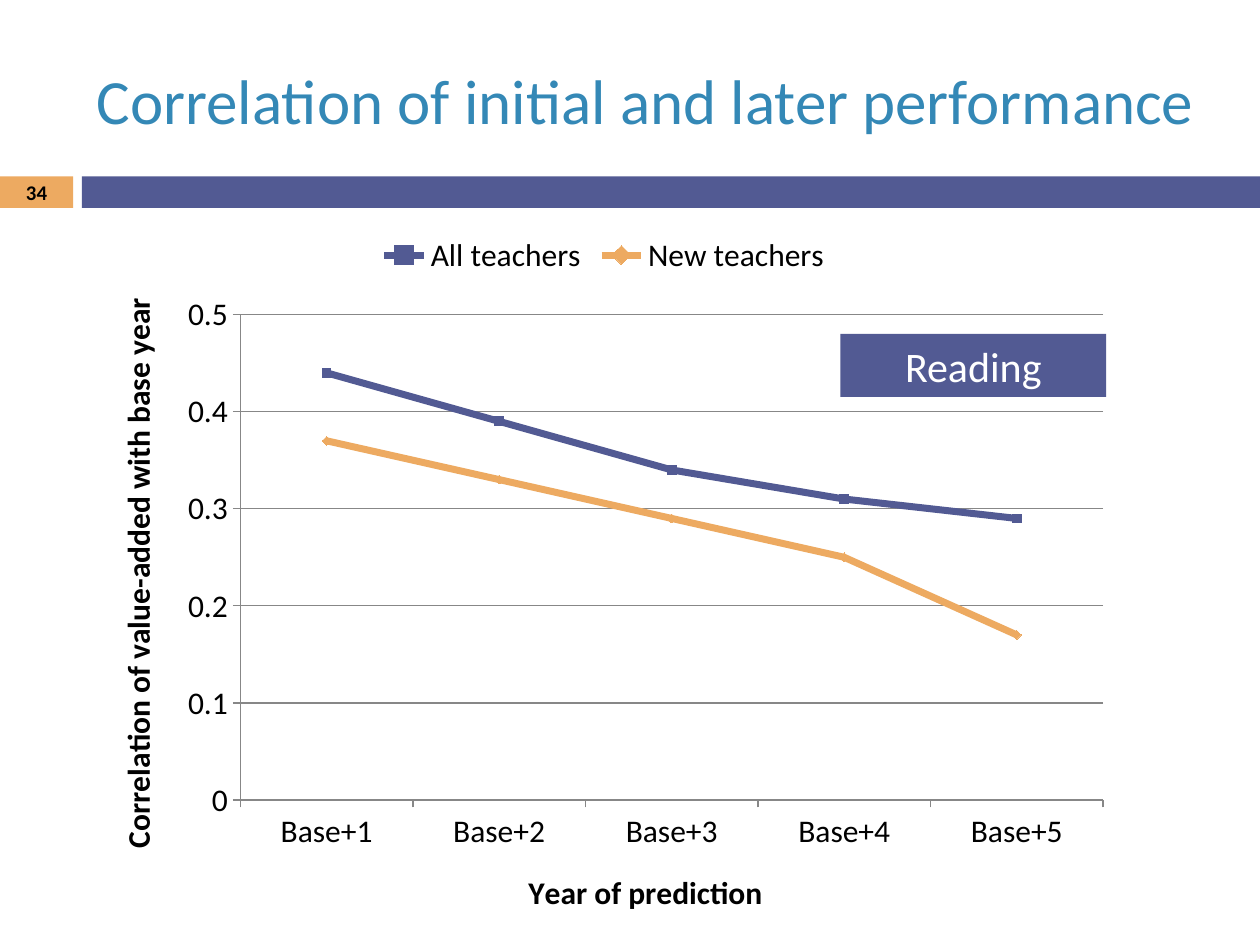
from pptx import Presentation
from pptx.chart.data import CategoryChartData
from pptx.dml.color import RGBColor
from pptx.enum.chart import (XL_CHART_TYPE as ChartType, XL_LEGEND_POSITION as LegendPosition,
                             XL_MARKER_STYLE as Marker, XL_TICK_MARK as TickMark)
from pptx.enum.shapes import MSO_SHAPE as Preset
from pptx.enum.text import MSO_ANCHOR as Anchor, PP_ALIGN as Align
from pptx.oxml import parse_xml
from pptx.oxml.ns import nsdecls
from pptx.util import Inches, Pt

COLORS = {"indigo": "525A93", "orange": "EDAA61", "title": "3488B6",
          "black": "000000", "white": "FFFFFF", "grid": "878787"}
FONT = "Calibri"
CATEGORIES = [f"Base+{year}" for year in range(1, 6)]
SERIES = [
    ("All teachers", [0.44, 0.39, 0.34, 0.31, 0.29], "indigo", Marker.SQUARE),
    ("New teachers", [0.37, 0.33, 0.29, 0.25, 0.17], "orange", Marker.DIAMOND),
]
PLOT_LAYOUT = {"x": 0.15, "y": 0.13, "w": 0.83, "h": 0.67}


class SlideBuilder:
    def __init__(self, slide):
        self.slide = slide

    def color(self, name):
        return RGBColor.from_string(COLORS[name])

    def style_font(self, font, size, color, bold=False):
        font.name = FONT
        font.size = Pt(size)
        font.bold = bold
        font.color.rgb = self.color(color)

    def label(self, shape, text, size, color, align=Align.CENTER, bold=False):
        text_frame = shape.text_frame
        text_frame.text = text
        text_frame.word_wrap = True
        text_frame.vertical_anchor = Anchor.MIDDLE
        paragraph = text_frame.paragraphs[0]
        paragraph.alignment = align
        self.style_font(paragraph.runs[0].font, size, color, bold)

    def rectangle(self, box, fill):
        shape = self.slide.shapes.add_shape(Preset.RECTANGLE, *map(Inches, box))
        shape.shadow.inherit = False
        shape.fill.solid()
        shape.fill.fore_color.rgb = self.color(fill)
        shape.line.fill.background()
        return shape

    def text(self, box, text, size, color, align=Align.LEFT, bold=False):
        shape = self.slide.shapes.add_textbox(*map(Inches, box))
        shape.text_frame.margin_right = 0
        if align == Align.CENTER:
            shape.text_frame.margin_left = 0
        self.label(shape, text, size, color, align, bold)

    def style_line(self, line, color, width):
        line.color.rgb = self.color(color)
        line.width = Pt(width)

    def axis(self, axis, title):
        axis.has_title = True
        axis.axis_title.text_frame.text = title
        run = axis.axis_title.text_frame.paragraphs[0].runs[0]
        self.style_font(run.font, 18, "black", True)
        axis.major_tick_mark = TickMark.OUTSIDE
        axis.minor_tick_mark = TickMark.NONE
        self.style_line(axis.format.line, "grid", 0.75)

    def place_plot(self, chart):
        plot_area = chart.plots[0]._element.getparent()
        for layout in plot_area.findall("{*}layout"):
            plot_area.remove(layout)
        modes = "".join(f'<c:{side}Mode val="edge"/>' for side in "xy")
        sizes = "".join(f'<c:{side} val="{value}"/>' for side, value in PLOT_LAYOUT.items())
        plot_area.insert(0, parse_xml(
            f'<c:layout {nsdecls("c")}><c:manualLayout><c:layoutTarget val="inner"/>'
            f'{modes}{sizes}</c:manualLayout></c:layout>'))

    def line_chart(self, box, x_title, y_title):
        data = CategoryChartData(number_format="General")
        data.categories = CATEGORIES
        for name, values, _, _ in SERIES:
            data.add_series(name, values)
        chart = self.slide.shapes.add_chart(ChartType.LINE_MARKERS, *map(Inches, box), data).chart
        self.style_font(chart.font, 18, "black")
        chart.has_title = False
        chart.has_legend = True
        chart.legend.position = LegendPosition.TOP
        chart.legend.include_in_layout = False
        self.axis(chart.category_axis, x_title)
        value_axis = chart.value_axis
        self.axis(value_axis, y_title)
        value_axis.minimum_scale = 0
        value_axis.maximum_scale = 0.5
        value_axis.major_unit = 0.1
        value_axis.has_major_gridlines = True
        self.style_line(value_axis.major_gridlines.format.line, "grid", 0.75)
        plot = chart.plots[0]
        plot.vary_by_categories = False
        for series, (_, _, color, marker) in zip(plot.series, SERIES):
            series.smooth = False
            self.style_line(series.format.line, color, 4)
            series.marker.style = marker
            series.marker.size = 5
            series.marker.format.fill.solid()
            series.marker.format.fill.fore_color.rgb = self.color(color)
            self.style_line(series.marker.format.line, color, 0.75)
        self.place_plot(chart)


def main():
    presentation = Presentation()
    presentation.slide_width = Inches(10)
    presentation.slide_height = Inches(7.5)
    builder = SlideBuilder(presentation.slides.add_slide(presentation.slide_layouts[6]))
    builder.rectangle((0, 1.4, 0.58, 0.25), "orange")
    builder.rectangle((0.65, 1.4, 9.35, 0.25), "indigo")
    builder.text((0.67, 0.25, 8.92, 1.08), "Correlation of initial and later performance", 36, "title")
    builder.text((0, 1.39, 0.58, 0.27), "34", 11.9, "black", Align.CENTER, True)
    builder.line_chart((0.67, 1.75, 8.25, 5.75), "Year of prediction",
                       "Correlation of value-added with base year")
    subject = builder.rectangle((6.67, 2.65, 2.11, 0.5), "indigo")
    builder.label(subject, "Reading", 24, "white")
    presentation.save("out.pptx")


if __name__ == "__main__":
    main()
